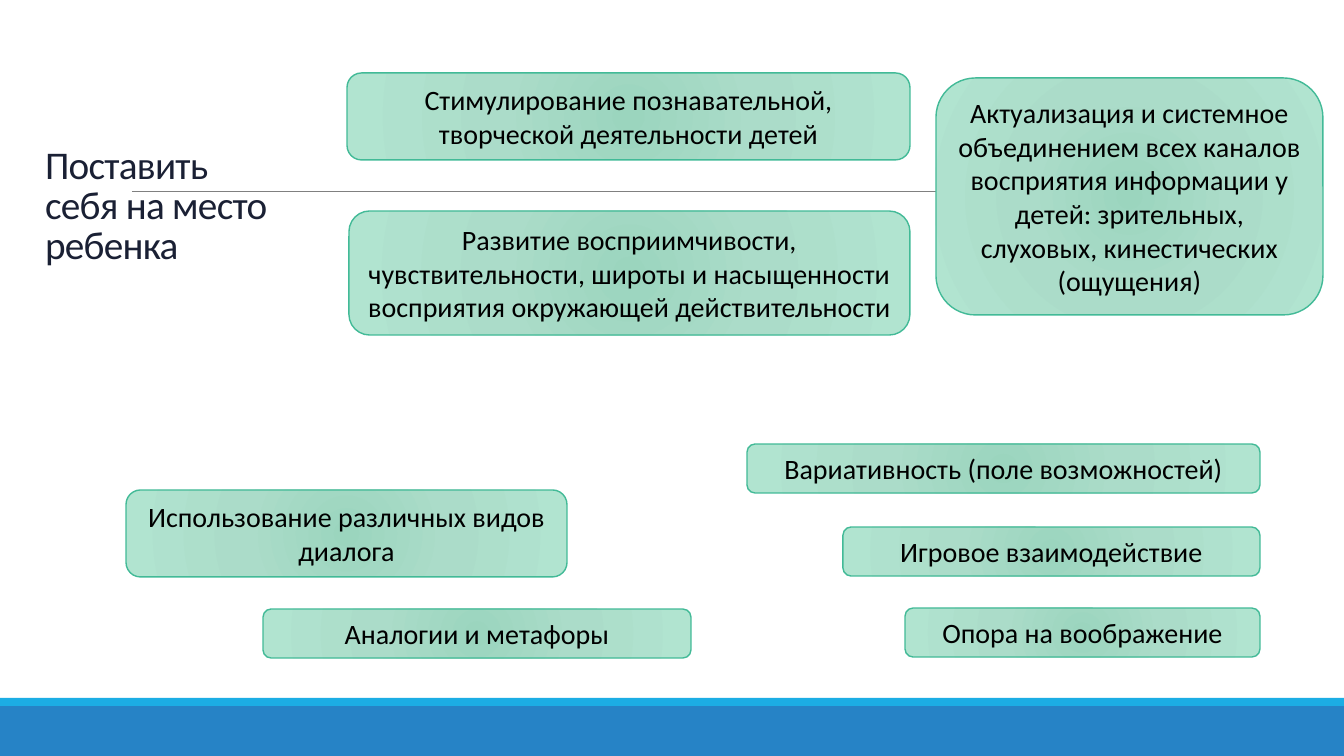
from pptx import Presentation, util as u
from pptx.dml.color import RGBColor
from pptx.enum import shapes, text
from pptx.oxml import parse_xml
from pptx.oxml.ns import nsdecls, qn
from lxml import etree

# Content: left, top, width, height in px, then paragraphs
TITLE = "Поставить себя на место ребенка"
TITLE_BOX = (35, 48, 261, 225)
CARDS = [
    (347, 73, 563, 87, ["Стимулирование познавательной, творческой деятельности детей"]),
    (126, 490, 441, 87, ["Использование различных видов диалога"]),
    (843, 527, 417, 49, ["Игровое взаимодействие"]),
    (905, 608, 355, 49, ["Опора на воображение"]),
    (263, 609, 428, 49, ["Аналогии и метафоры"]),
    (936, 78, 387, 237, ["Актуализация и системное объединением всех каналов восприятия "
                         "информации у детей: зрительных, слуховых, кинестических",
                         "(ощущения)"]),
    (747, 444, 513, 49, ["Вариативность (поле возможностей)"]),
    (349, 211, 561, 124, ["Развитие восприимчивости, чувствительности, широты и "
                          "насыщенности восприятия окружающей действительности"]),
]
FOOTER = [(0, 706, 1344, 50, "blue"), (0, 698, 1344, 8, "cyan")]
RULE = (132, 191, 1231, 191)
COLORS = {"blue": "2683C6", "cyan": "1CADE4", "gray": "808080",
          "title": "1A2034", "text": "000000", "edge": "42BA97"}
CARD_STOPS = [(0, "9BD5BE"), (45, "ABDCC9"), (100, "B1E4D0")]
FONT = "Calibri"


def px(*lengths):
    return [u.Inches(n / 100.8) for n in lengths]


def color(name):
    return RGBColor.from_string(COLORS[name])


def add_run(p, words, size, name):
    r = p.add_run()
    r.text = words
    r.font.name, r.font.size = FONT, u.Pt(size)
    r.font.color.rgb = color(name)
    return r


def add_shape(kind, box):
    sp = s.shapes.add_shape(kind, *px(*box))
    sp.shadow.inherit = False
    return sp


def fill_radial(sp):
    stops = "".join(f'<a:gs pos="{pos * 1000}"><a:srgbClr val="{rgb}"/></a:gs>'
                    for pos, rgb in CARD_STOPS)
    grad = parse_xml(
        f'<a:gradFill {nsdecls("a")} rotWithShape="1"><a:gsLst>{stops}</a:gsLst>'
        '<a:path path="circle"><a:fillToRect l="100000" t="100000" '
        'r="100000" b="100000"/></a:path></a:gradFill>')
    sp.element.spPr.find(qn("a:prstGeom")).addnext(grad)


prs = Presentation()
prs.slide_width, prs.slide_height = px(1344, 756)
s = prs.slides.add_slide(prs.slide_layouts[5])

# Footer bars and rule
for *box, name in FOOTER:
    bar = add_shape(shapes.MSO_SHAPE.RECTANGLE, box)
    bar.fill.solid()
    bar.fill.fore_color.rgb = color(name)
    bar.line.fill.background()
rule = s.shapes.add_connector(shapes.MSO_CONNECTOR.STRAIGHT, *px(*RULE))
rule.line.color.rgb, rule.line.width = color("gray"), u.Pt(0.5)
etree.SubElement(rule.element.spPr, qn("a:effectLst"))

# Title, in front of the rule
title = s.shapes.title
title.left, title.top, title.width, title.height = px(*TITLE_BOX)
title.element.getparent().append(title.element)
tf = title.text_frame
tf.word_wrap, tf.auto_size = True, text.MSO_AUTO_SIZE.NONE
tf.vertical_anchor = text.MSO_ANCHOR.BOTTOM
p = tf.paragraphs[0]
p.alignment, p.line_spacing = text.PP_ALIGN.LEFT, 0.85
r = add_run(p, TITLE, 28, "title")
r.font._element.set("spc", "-50")

# Cards
for *box, paragraphs in CARDS:
    card = add_shape(shapes.MSO_SHAPE.ROUNDED_RECTANGLE, box)
    fill_radial(card)
    card.line.color.rgb, card.line.width = color("edge"), u.Pt(1)
    tf = card.text_frame
    tf.word_wrap, tf.auto_size = True, text.MSO_AUTO_SIZE.SHAPE_TO_FIT_TEXT
    tf.vertical_anchor = text.MSO_ANCHOR.MIDDLE
    for i, words in enumerate(paragraphs):
        p = tf.add_paragraph() if i else tf.paragraphs[0]
        p.alignment = text.PP_ALIGN.CENTER
        add_run(p, words, 20, "text")

prs.save("out.pptx")
